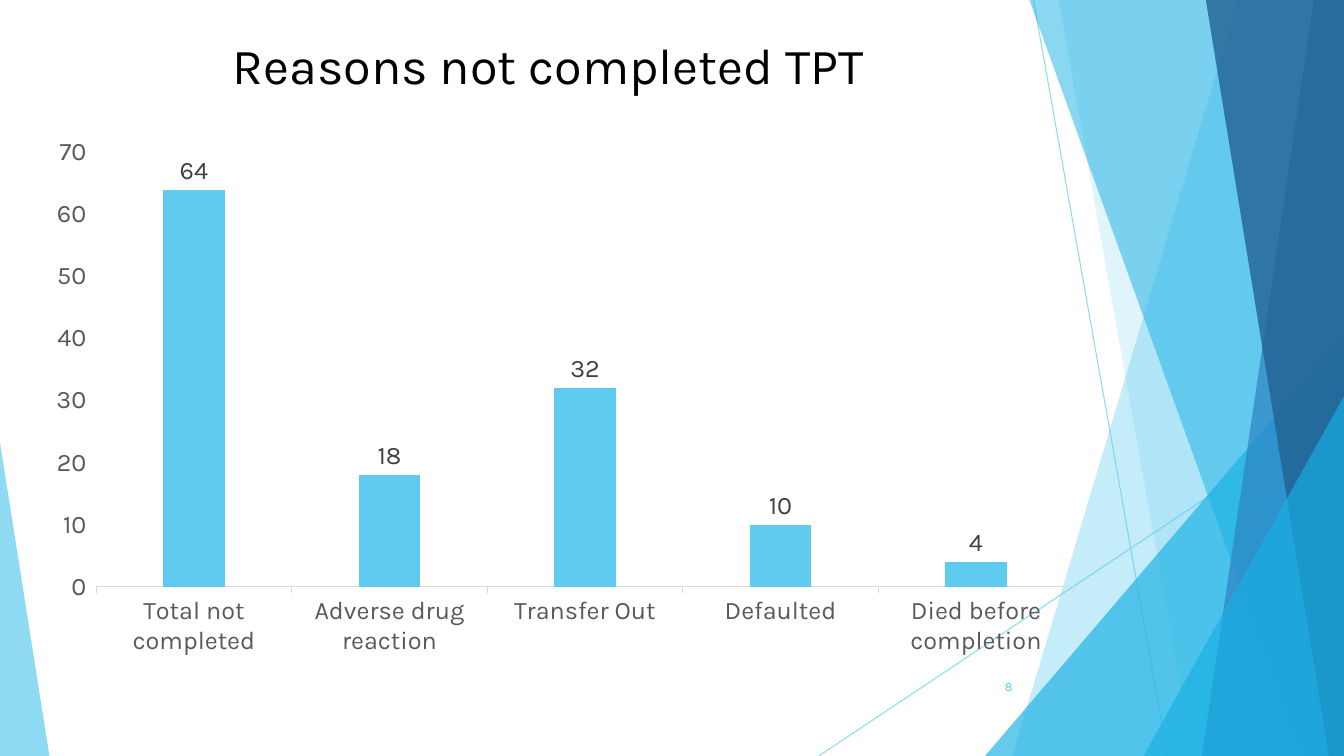
from dataclasses import dataclass
from lxml.etree import SubElement
from pptx import Presentation
from pptx.chart.data import CategoryChartData as ChartData
from pptx.dml.color import RGBColor as RGB
from pptx.enum.chart import XL_CHART_TYPE as Kind, XL_LABEL_POSITION as Spot
from pptx.enum.chart import XL_TICK_MARK as Tick
from pptx.enum.shapes import MSO_CONNECTOR as Link, MSO_SHAPE as Shape
from pptx.enum.text import MSO_ANCHOR as Anchor, PP_ALIGN as Align
from pptx.oxml.ns import qn
from pptx.util import Inches, Pt


@dataclass(frozen=True)
class Theme:
    font: str = "Karla"
    black: str = "000000"
    sky: str = "5FCBEF"
    cyan: str = "17B0E4"
    blue: str = "2E83C3"
    navy: str = "226292"
    axis: str = "595959"
    label: str = "404040"
    rule: str = "D9D9D9"
    title: int = 36
    body: int = 18
    small: int = 9


T = Theme()

# Content
WIDE, HIGH = 13.33, 7.5
TITLE = "Reasons not completed TPT"
NUMBER = "8"
REASONS = {
    "Total not completed": 64,
    "Adverse drug reaction": 18,
    "Transfer Out": 32,
    "Defaulted": 10,
    "Died before completion": 4,
}

# Backdrop, back to front
LINES = [((10.25, 0), (11.58, HIGH)), ((WIDE, 4.03), (8.12, HIGH))]
# band: top left x, bottom left x, colour, opacity; all reach the right edge
# wedge: left, top, width, apex (0 left, 1 right), colour, opacity
ART = [
    ("band", 12.28, 10.04, T.sky, 36),
    ("band", 10.5, 11.83, T.sky, 20),
    ("wedge", 9.77, 3.33, 3.56, 1, T.cyan, 66),
    ("band", 10.21, 12.91, T.cyan, 50),
    ("band", 13.03, 11.92, T.blue, 70),
    ("band", 11.96, 13.18, T.navy, 80),
    ("wedge", 11.34, 3.93, 1.99, 1, T.cyan, 66),
    ("wedge", 0, 4.39, 0.49, 0, T.sky, 70),
]


def box(*nums):
    return [Inches(n) for n in nums]


def fade(fill, tint, alpha):
    fill.solid()
    fill.fore_color.rgb = RGB.from_string(tint)
    node = fill._xPr.find(".//" + qn("a:srgbClr"))
    SubElement(node, qn("a:alpha")).set("val", str(alpha * 1000))


def style(font, size, tint):
    font.name, font.size, font.bold = T.font, Pt(size), False
    font.color.rgb = RGB.from_string(tint)


def write(frame, text, size, tint, align):
    frame.word_wrap = True
    frame.vertical_anchor = Anchor.MIDDLE
    para = frame.paragraphs[0]
    para.text, para.alignment = text, align
    style(para.font, size, tint)


def band(shapes, top, base, tint, alpha):
    pen = shapes.build_freeform(Inches(top), 0)
    pen.add_line_segments(
        [box(*p) for p in ((WIDE, 0), (WIDE, HIGH), (base, HIGH))])
    return pen.convert_to_shape()


def wedge(shapes, left, top, width, apex, tint, alpha):
    form = shapes.add_shape(
        Shape.ISOSCELES_TRIANGLE, *box(left, top, width, HIGH - top))
    form.adjustments[0] = apex
    return form


def backdrop(shapes):
    for start, end in LINES:
        line = shapes.add_connector(Link.STRAIGHT, *box(*start, *end))
        line.line.width = Pt(0.75)
        fade(line.line.fill, T.sky, 70)
        SubElement(line._element.spPr, qn("a:effectLst"))
    for kind, *args in ART:
        draw = band if kind == "band" else wedge
        form = draw(shapes, *args)
        form.shadow.inherit = False
        fade(form.fill, *args[-2:])
        form.line.fill.background()


def bars(shapes):
    data = ChartData()
    data.categories = list(REASONS)
    data.add_series("Series 1", list(REASONS.values()))
    chart = shapes.add_chart(
        Kind.COLUMN_CLUSTERED, *box(0.35, 1.26, 10.51, 5.35), data).chart
    style(chart.font, T.body, T.black)
    chart.has_legend = chart.has_title = False

    # Axes
    cats, vals = chart.category_axis, chart.value_axis
    for axis in (cats, vals):
        axis.has_major_gridlines = False
        axis.major_tick_mark = Tick.OUTSIDE
        style(axis.tick_labels.font, T.body, T.axis)
    cats.format.line.color.rgb = RGB.from_string(T.rule)
    cats.format.line.width = Pt(0.75)
    vals.format.line.fill.background()
    vals.minimum_scale, vals.maximum_scale, vals.major_unit = 0, 70, 10

    # Columns and their labels
    plot = chart.plots[0]
    plot.gap_width, plot.overlap = 219, -27
    plot.vary_by_categories = False
    fill = plot.series[0].format.fill
    fill.solid()
    fill.fore_color.rgb = RGB.from_string(T.sky)
    plot.has_data_labels = True
    labels = plot.data_labels
    labels.show_value = True
    labels.position = Spot.OUTSIDE_END
    style(labels.font, T.body, T.label)


def main():
    deck = Presentation()
    deck.slide_width, deck.slide_height = box(WIDE, HIGH)
    slide = deck.slides.add_slide(deck.slide_layouts[5])
    shapes = slide.shapes
    backdrop(shapes)

    # Title
    head = shapes.title
    head.left, head.top, head.width, head.height = box(0.74, 0.23, 9.4, 0.81)
    write(head.text_frame, TITLE, T.title, T.black, Align.CENTER)

    bars(shapes)

    # Slide number
    foot = shapes.add_textbox(*box(9.39, 6.61, 0.75, 0.4))
    write(foot.text_frame, NUMBER, T.small, T.sky, Align.RIGHT)
    deck.save("out.pptx")


if __name__ == "__main__":
    main()
